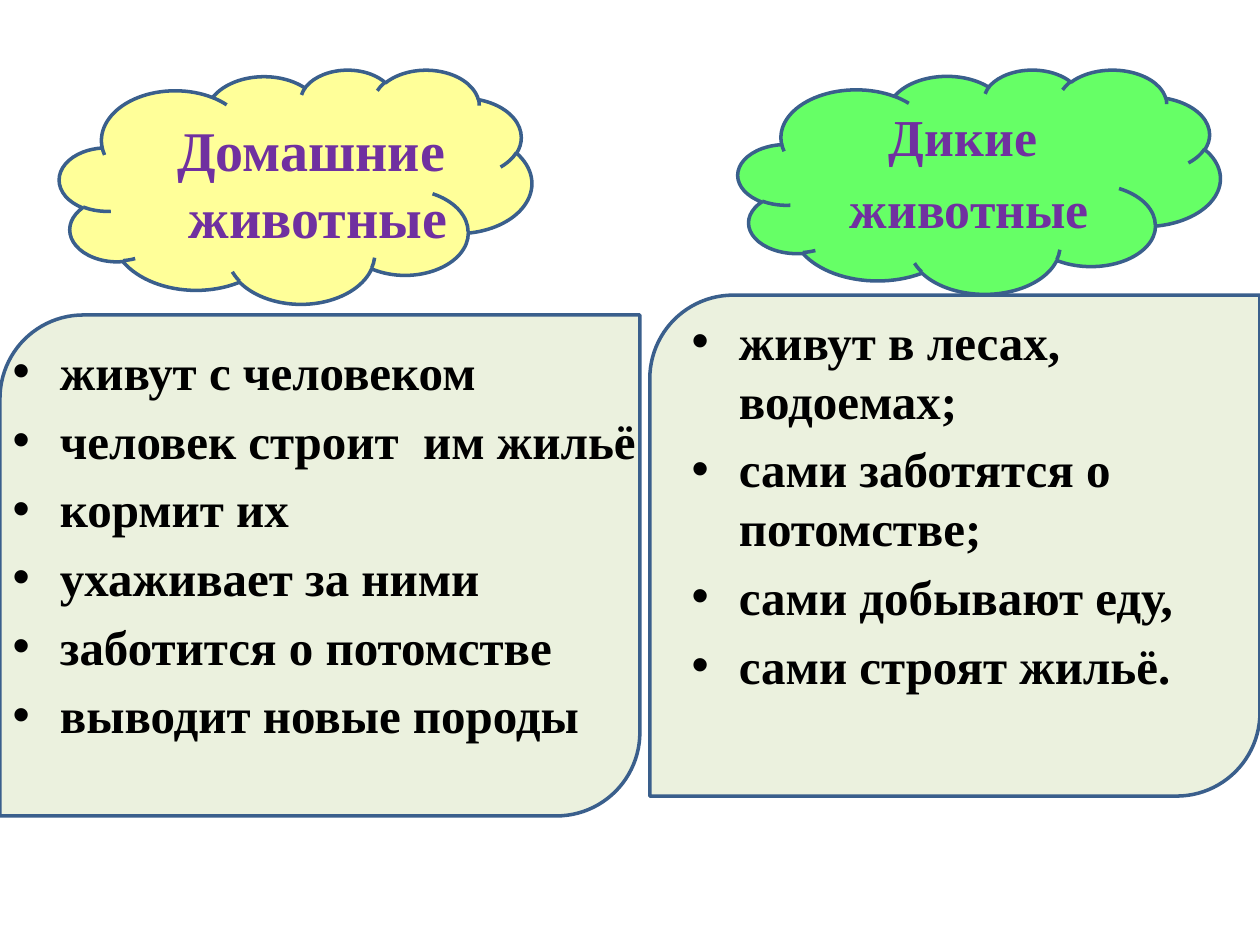
from pptx import Presentation
from pptx.dml.color import RGBColor
from pptx.enum.shapes import MSO_SHAPE as Shape
from pptx.enum.text import MSO_ANCHOR as Anchor, MSO_AUTO_SIZE as AutoSize
from pptx.util import Cm, Pt

FONT = "Times New Roman"
OUTLINE, CARD, HEADING, INK = "3A5F8C", "EBF1DE", "7030A0", "000000"


def rgb(value):
    return RGBColor.from_string(value)


def place(box, offset):
    """Turn an offset (left, top, width, height) into slide coordinates."""
    left, top, width, height = offset
    return [Cm(v) for v in (box[0] + left, box[1] + top, width, height)]


def add_outlined(slide, kind, bounds, fill):
    sp = slide.shapes.add_shape(kind, *bounds)
    sp.shadow.inherit = False
    sp.fill.solid()
    sp.fill.fore_color.rgb = rgb(fill)
    sp.line.color.rgb = rgb(OUTLINE)
    sp.line.width = Pt(2)


def fill_text(sp, bounds, lines, size, color, anchor=Anchor.TOP):
    """Move a placeholder to the front and fill it, one paragraph a line."""
    sp.left, sp.top, sp.width, sp.height = bounds
    sp.element.getparent().append(sp.element)
    tf = sp.text_frame
    tf.word_wrap = True
    tf.auto_size = AutoSize.NONE
    tf.vertical_anchor = anchor
    for i, line in enumerate(lines):
        p = tf.add_paragraph() if i else tf.paragraphs[0]
        if i == 0:
            p.space_before = Pt(0)
        r = p.add_run()
        r.text = line
        r.font.name, r.font.size, r.font.bold = FONT, Pt(size), True
        r.font.color.rgb = rgb(color)


def add_column(slide, box, cloud, cloud_fill, heading, features):
    """Card filling the box, with a cloud heading above and a list inside.

    heading and features are (placeholder, offset, lines, size).
    """
    add_outlined(slide, Shape.ROUND_2_DIAG_RECTANGLE, [Cm(v) for v in box], CARD)
    add_outlined(slide, Shape.CLOUD, place(box, cloud), cloud_fill)
    for (idx, offset, lines, size), color, anchor in (
        (heading, HEADING, Anchor.BOTTOM),
        (features, INK, Anchor.TOP),
    ):
        sp = slide.placeholders[idx]
        fill_text(sp, place(box, offset), lines, size, color, anchor)
        if anchor == Anchor.BOTTOM:
            center(sp)


def center(sp):
    from_paragraphs = sp.text_frame.paragraphs
    for p in from_paragraphs:
        p.alignment = 2


def main():
    prs = Presentation()
    prs.slide_width, prs.slide_height = Cm(25.4), Cm(19.05)
    slide = prs.slides.add_slide(prs.slide_layouts.get_by_name("Comparison"))
    title = slide.shapes.title.element
    title.getparent().remove(title)

    add_column(
        slide, (13.1, 5.95, 12.3, 10.1),
        cloud=(1.78, -4.55, 9.72, 4.52), cloud_fill="66FF66",
        heading=(3, (0.59, -3.97, 11.71, 2.97), ["Дикие ", "животные"], 29.6),
        features=(4, (0.59, 0.2, 11.71, 12.24), [
            "живут в лесах, водоемах;",
            "сами заботятся о потомстве;",
            "сами добывают еду,",
            "сами строят жильё.",
        ], 28),
    )
    add_column(
        slide, (0, 6.35, 12.9, 10.1),
        cloud=(1.2, -4.95, 9.52, 4.72), cloud_fill="FFFF99",
        heading=(1, (0.8, -4.37, 11.23, 3.18), ["Домашние  животные"], 32),
        features=(2, (0, 0.41, 13.28, 11.66), [
            "живут с человеком",
            "человек строит  им жильё",
            "кормит их",
            "ухаживает за ними",
            "заботится о потомстве",
            "выводит новые породы",
        ], 28),
    )
    prs.save("out.pptx")


if __name__ == "__main__":
    main()
